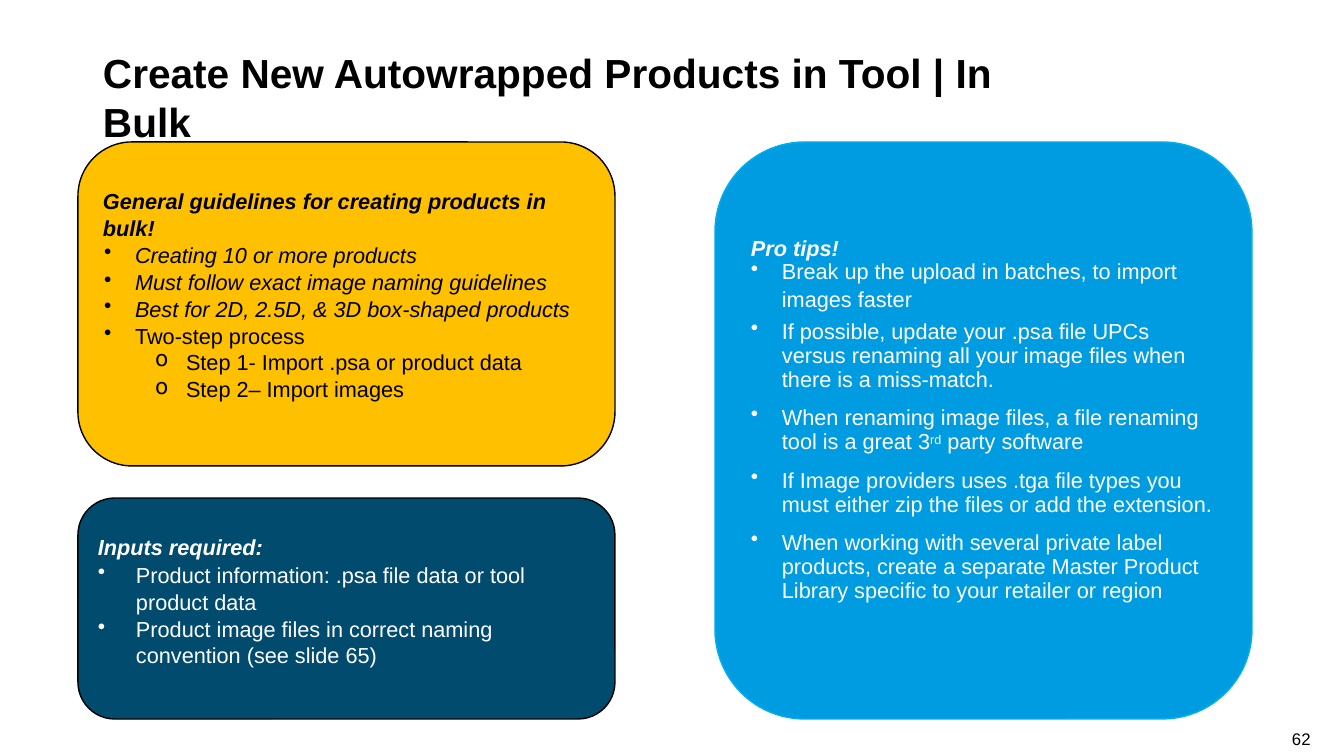
from dataclasses import dataclass

from lxml.etree import SubElement
from pptx import Presentation
from pptx.dml.color import RGBColor
from pptx.enum.shapes import MSO_SHAPE
from pptx.oxml.ns import qn
from pptx.util import Emu, Pt

BLACK, WHITE = "000000", "FFFFFF"
BODY_SIZE = 15.5


@dataclass
class Line:
    text: str
    before: float = 0
    spacing: float = 1.0
    bullet: str = ""
    margin: int = 1
    hanging: int = 0
    level: int = 0
    bold: bool = False
    italic: bool = False
    superscript: str = ""
    rest: str = ""


def px(value):
    return Emu(round(value * 914400 / 100.8))


def color(value):
    return RGBColor.from_string(value)


def add_panel(slide, left, top, width, height, fill, outline):
    shape = slide.shapes.add_shape(
        MSO_SHAPE.ROUNDED_RECTANGLE, px(left), px(top), px(width), px(height))
    shape.shadow.inherit = False
    shape.fill.solid()
    shape.fill.fore_color.rgb = color(fill)
    shape.line.color.rgb = color(outline)
    shape.line.width = Pt(1)


def format_indent(paragraph, line):
    properties = paragraph._p.get_or_add_pPr()
    properties.set("marL", str(px(line.margin)))
    properties.set("indent", str(-px(line.hanging)))
    if line.bullet:
        SubElement(properties, qn("a:buChar"), char=line.bullet)
        tabs = SubElement(properties, qn("a:tabLst"))
        SubElement(tabs, qn("a:tab"), pos=str(px(line.margin)), algn="l")


def add_text(slide, left, top, width, height, lines, text_color,
             size=BODY_SIZE, inset=0):
    box = slide.shapes.add_textbox(px(left), px(top), px(width), px(height))
    frame = box.text_frame
    frame.word_wrap = True
    frame.margin_left = frame.margin_right = frame.margin_bottom = 0
    frame.margin_top = px(inset)
    for index, line in enumerate(lines):
        paragraph = frame.add_paragraph() if index else frame.paragraphs[0]
        paragraph.level = line.level
        format_indent(paragraph, line)
        paragraph.space_before = Pt(line.before)
        paragraph.line_spacing = line.spacing
        font = paragraph.font
        font.name = "Arial"
        font.size = Pt(size)
        font.bold = line.bold
        font.italic = line.italic
        font.color.rgb = color(text_color)
        paragraph.add_run().text = line.text
        if line.superscript:
            raised = paragraph.add_run()
            raised.text = line.superscript
            raised.font._element.set("baseline", "24000")
            paragraph.add_run().text = line.rest


def heading(text, spacing=1.0):
    return Line(text, spacing=spacing, bold=True, italic=True)


def guideline(text, before, italic=True):
    return Line(text, before, bullet="•", margin=33, hanging=31, italic=italic)


def step(text, before):
    return Line(text, before, bullet="o", margin=84, hanging=31, level=1)


def required_input(text, before, spacing):
    return Line(text, before, Pt(spacing), "•", 39, 38)


def tip(text, before, spacing=Pt(17.3), superscript="", rest=""):
    return Line(text, before, spacing, "•", 41, 31,
                superscript=superscript, rest=rest)


def main():
    presentation = Presentation()
    presentation.slide_width = px(1344)
    presentation.slide_height = px(756)
    slide = presentation.slides.add_slide(presentation.slide_layouts[6])

    add_text(slide, 102, 44, 980, 98,
             [Line("Create New Autowrapped Products in Tool | In Bulk", bold=True)],
             BLACK, size=29, inset=4)

    add_panel(slide, 78, 142, 537, 324, "FFC000", BLACK)
    add_text(slide, 102, 184, 470, 240, [
        heading("General guidelines for creating products in bulk!", 1.01),
        guideline("Creating 10 or more products", 0.9),
        guideline("Must follow exact image naming guidelines", 0.9),
        guideline("Best for 2D, 2.5D, & 3D box-shaped products", 0.1),
        guideline("Two-step process", 0.9, italic=False),
        step("Step 1- Import .psa or product data", 0.1),
        step("Step 2– Import images", 0.9),
    ], BLACK, inset=4)

    add_panel(slide, 78, 498, 537, 221, "004B6E", BLACK)
    add_text(slide, 97, 530, 455, 136, [
        heading("Inputs required:"),
        required_input("Product information: .psa file data or tool product data",
                       0.1, 19.5),
        required_input("Product image files in correct naming convention "
                       "(see slide 65)", 0.6, 18.8),
    ], WHITE, inset=4)

    add_panel(slide, 715, 142, 537, 577, "009CE2", "00AFEF")
    add_text(slide, 750, 231, 120, 29, [heading("Pro tips!")], WHITE, inset=4)
    add_text(slide, 741, 257, 472, 372, [
        tip("Break up the upload in batches, to import images faster", 0, 1.05),
        tip("If possible, update your .psa file UPCs versus renaming all your "
            "image files when there is a miss-match.", 5.6),
        tip("When renaming image files, a file renaming tool is a great 3", 9.7,
            superscript="rd", rest=" party software"),
        tip("If Image providers uses .tga file types you must either zip the "
            "files or add the extension.", 10.4),
        tip("When working with several private label products, create a "
            "separate Master Product Library specific to your retailer or "
            "region", 9.7),
    ], WHITE)

    add_text(slide, 1291, 729, 26, 21, [Line("62", spacing=Pt(14.3))],
             BLACK, size=12)
    presentation.save("out.pptx")


if __name__ == "__main__":
    main()
